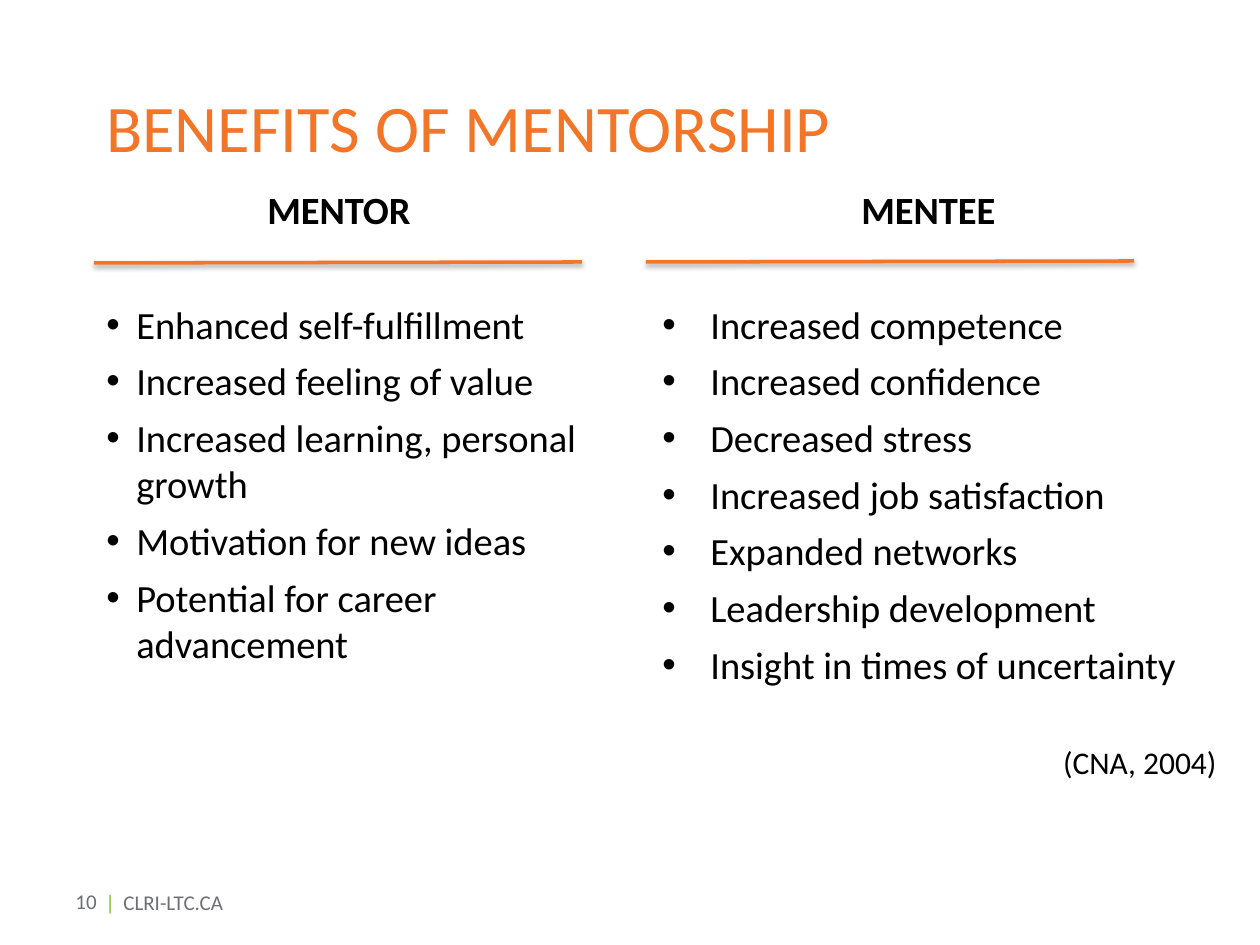
"""Build the slide on the benefits of mentorship for mentor and mentee."""
from lxml import etree
from pptx import Presentation
from pptx import util as u
from pptx.dml.color import RGBColor
from pptx.enum import shapes, text
from pptx.oxml import parse_xml
from pptx.oxml.ns import nsdecls, qn

PX = 914400 / 126
ORANGE = RGBColor(0xF2, 0x75, 0x28)
GREEN = RGBColor(0x7C, 0xBF, 0x30)
GREY = RGBColor(0x6E, 0x6F, 0x72)
BLACK = RGBColor(0, 0, 0)
LEFT, MID, RIGHT = text.PP_ALIGN.LEFT, text.PP_ALIGN.CENTER, text.PP_ALIGN.RIGHT
TOP, HALF = text.MSO_ANCHOR.TOP, text.MSO_ANCHOR.MIDDLE


def px(num):
    return u.Emu(round(num * PX))


def put(para, words, size=22, color=BLACK, bold=False, align=LEFT, after=0):
    para.alignment = align
    para.space_after = u.Pt(after)
    run = para.add_run()
    run.text = words
    run.font.name = "Calibri"
    run.font.size = u.Pt(size)
    run.font.bold = bold
    run.font.color.rgb = color


deck = Presentation()
deck.slide_width, deck.slide_height = px(1260), px(945)
slide = deck.slides.add_slide(deck.slide_layouts[6])

frames = []
for left, top, wide, high, anchor in (
    (63, 876, 107, 50, HALF),
    (93, 883, 382, 38, TOP),
    (94, 72, 1040, 108, HALF),
    (53, 180, 557, 536, TOP),
    (650, 180, 557, 536, TOP),
    (935, 737, 294, 50, TOP),
):
    frame = slide.shapes.add_textbox(px(left), px(top), px(wide), px(high)).text_frame
    frame.word_wrap = True
    frame.vertical_anchor = anchor
    frames.append(frame)
page, foot, title, mentor, mentee, cite = frames

put(page.paragraphs[0], "10", size=12, color=GREY)
line = foot.paragraphs[0]
tabs = etree.SubElement(line._p.get_or_add_pPr(), qn("a:tabLst"))
etree.SubElement(tabs, qn("a:tab"), pos=str(px(18)), algn="l")
put(line, "|", size=12, color=GREEN)
put(line, "\tCLRI-LTC.CA", size=12, color=GREY)
put(title.paragraphs[0], "BENEFITS OF MENTORSHIP", size=38, color=ORANGE)
put(cite.paragraphs[0], "(CNA, 2004)", size=18, align=RIGHT)

columns = (
    (mentor, "MENTOR", 15, 71, 30, (
        "Enhanced self-fulfillment",
        "Increased feeling of value",
        "Increased learning, personal growth",
        "Motivation for new ideas",
        "Potential for career advancement",
    )),
    (mentee, "MENTEE", 0, 48, 48, (
        "Increased competence",
        "Increased confidence",
        "Decreased stress",
        "Increased job satisfaction",
        "Expanded networks",
        "Leadership development",
        "Insight in times of uncertainty",
    )),
)
for frame, head, inset, margin, hang, items in columns:
    para = frame.paragraphs[0]
    para._p.get_or_add_pPr().set("marL", str(px(inset)))
    put(para, head, bold=True, align=MID, after=39)
    for item in items:
        para = frame.add_paragraph()
        props = para._p.get_or_add_pPr()
        props.set("marL", str(px(margin)))
        props.set("indent", str(-px(hang)))
        etree.SubElement(props, qn("a:buFont"), typeface="Arial")
        etree.SubElement(props, qn("a:buChar"), char="•")
        put(para, item, after=6)

for left, top in ((94, 263), (646, 262)):
    rule = slide.shapes.add_connector(
        shapes.MSO_CONNECTOR.STRAIGHT, px(left), px(top), px(left + 488), px(top - 1))
    rule.line.color.rgb = ORANGE
    rule.line.width = u.Pt(2)
    rule._element.spPr.append(parse_xml(
        f'<a:effectLst {nsdecls("a")}><a:outerShdw blurRad="40000" dist="20000" '
        'dir="5400000" rotWithShape="0"><a:srgbClr val="000000">'
        '<a:alpha val="38000"/></a:srgbClr></a:outerShdw></a:effectLst>'))

deck.save("out.pptx")
